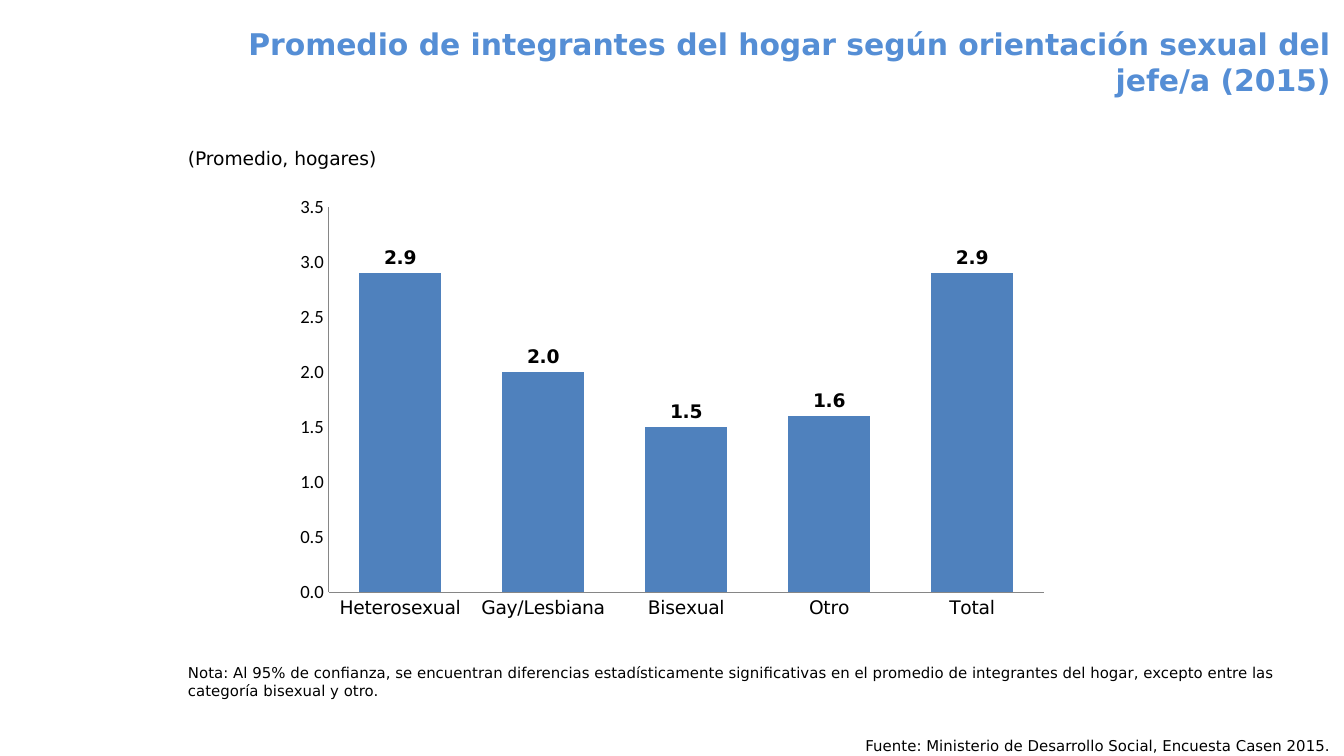
from pptx import Presentation
from pptx import util as u
from pptx.chart.data import CategoryChartData
from pptx.dml.color import RGBColor
from pptx.enum import chart as ch
from pptx.enum import shapes, text

WIDTH = 10
HEIGHT = WIDTH * 9 / 16
BODY_FONT, AXIS_FONT = "DejaVu Sans", "Calibri"
BLACK, WHITE, BLUE, BAR, GRAY = "000000", "FFFFFF", "558ED5", "4F81BD", "868686"
LEFT, RIGHT = text.PP_ALIGN.LEFT, text.PP_ALIGN.RIGHT

TITLE = ("Promedio de integrantes del hogar según orientación sexual del jefe/a (2015)",
         (1.1, 0.13, 8.9, 0.91), 16, BLUE, True, RIGHT, 0.06)
UNIT = ("(Promedio, hogares)", (1.3, 1.04, 1.66, 0.27), 10, BLACK, False, LEFT, 0.05)
NOTE = ("Nota: Al 95% de confianza, se encuentran diferencias estadísticamente significativas "
        "en el promedio de integrantes del hogar, excepto entre las categoría bisexual y otro.",
        (1.3, 4.89, 8.51, 0.37), 8, BLACK, False, LEFT, 0.05)
SOURCE = ("Fuente: Ministerio de Desarrollo Social, Encuesta Casen 2015.",
          (4.8, 5.43, 5.2, 0.17), 8, BLACK, False, RIGHT, 0.05)
AVERAGES = {"Heterosexual": 2.9, "Gay/Lesbiana": 2.0, "Bisexual": 1.5, "Otro": 1.6, "Total": 2.9}
CHART_AREA = (2.12, 1.4, 5.76, 3.27)


def color(value):
    return RGBColor.from_string(value)


def inches(area):
    return [u.Inches(length) for length in area]


def paint(fill, value):
    fill.solid()
    fill.fore_color.rgb = color(value)


def style(font, size, name, value, bold=False):
    font.size, font.name, font.bold = u.Pt(size), name, bold
    font.color.rgb = color(value)


def add_text(page, words, area, size, value, bold, align, inset, filled=False):
    if filled:
        box = page.shapes.add_shape(shapes.MSO_SHAPE.RECTANGLE, *inches(area))
        box.shadow.inherit = False
        box.line.fill.background()
        paint(box.fill, WHITE)
    else:
        box = page.shapes.add_textbox(*inches(area))
    frame = box.text_frame
    frame.word_wrap = True
    frame.vertical_anchor = text.MSO_ANCHOR.TOP
    frame.margin_top = u.Inches(inset)
    para = frame.paragraphs[0]
    para.text, para.alignment = words, align
    style(para.font, size, BODY_FONT, value, bold)


def add_averages(page):
    data = CategoryChartData(number_format="0.0")
    data.categories = list(AVERAGES)
    data.add_series("Series 1", list(AVERAGES.values()))
    chart = page.shapes.add_chart(
        ch.XL_CHART_TYPE.COLUMN_CLUSTERED, *inches(CHART_AREA), data).chart
    chart.has_legend = chart.has_title = False
    style(chart.font, 10, AXIS_FONT, BLACK)

    for axis, name in ((chart.category_axis, BODY_FONT), (chart.value_axis, AXIS_FONT)):
        axis.has_major_gridlines = False
        axis.major_tick_mark = axis.minor_tick_mark = ch.XL_TICK_MARK.NONE
        axis.format.line.color.rgb = color(GRAY)
        style(axis.tick_labels.font, 10, name, BLACK)
    scale = chart.value_axis
    scale.minimum_scale, scale.maximum_scale, scale.major_unit = 0, 3.5, 0.5
    scale.tick_labels.number_format = "0.0"
    scale.tick_labels.number_format_is_linked = False

    plot = chart.plots[0]
    plot.gap_width, plot.vary_by_categories = 75, False
    columns = plot.series[0]
    paint(columns.format.fill, BAR)
    labels = columns.data_labels
    labels.show_value = True
    labels.number_format, labels.number_format_is_linked = "0.0", False
    labels.position = ch.XL_LABEL_POSITION.OUTSIDE_END
    style(labels.font, 10, BODY_FONT, BLACK, True)


def main():
    deck = Presentation()
    deck.slide_width, deck.slide_height = inches((WIDTH, HEIGHT))
    page = deck.slides.add_slide(deck.slide_layouts[6])
    add_text(page, *TITLE)
    add_text(page, *SOURCE, filled=True)
    add_text(page, *UNIT)
    add_averages(page)
    add_text(page, *NOTE)
    deck.save("out.pptx")


if __name__ == "__main__":
    main()
